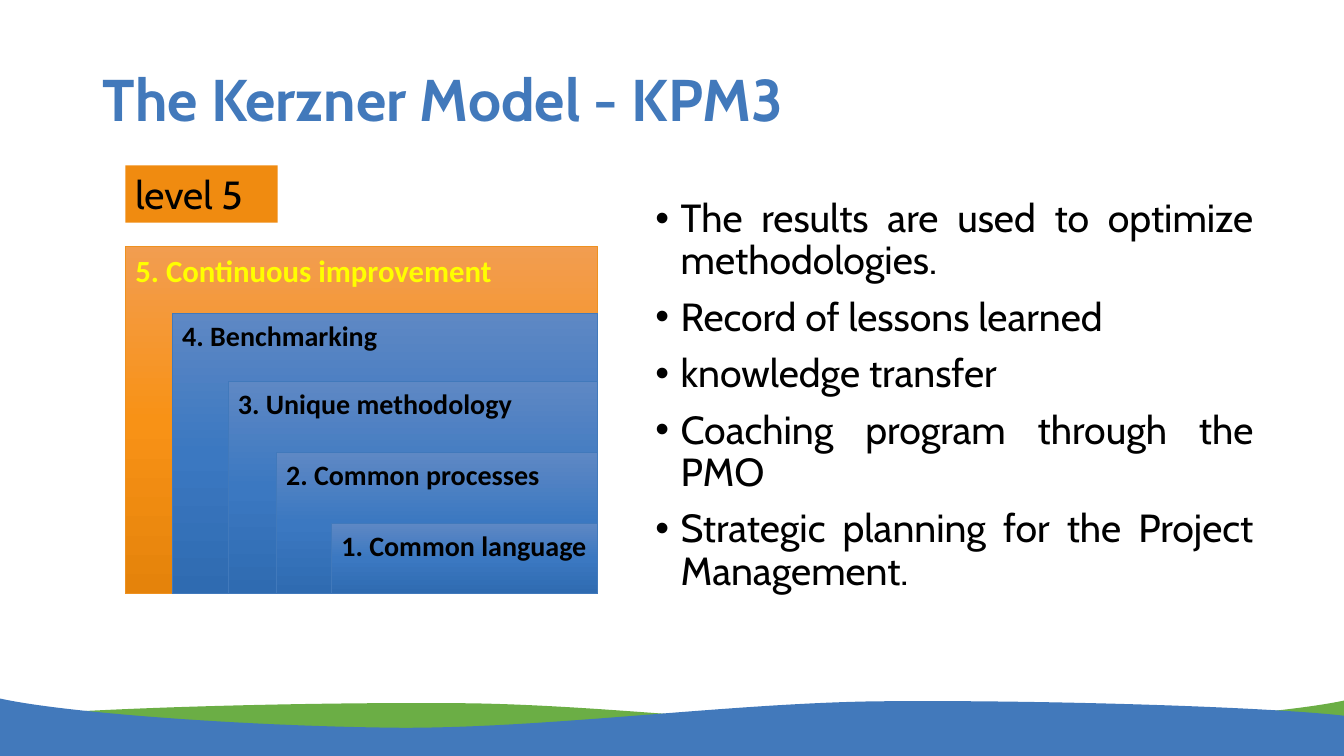
from copy import deepcopy
from dataclasses import dataclass

from lxml import etree
from pptx import Presentation
from pptx.dml.color import RGBColor
from pptx.enum.shapes import MSO_SHAPE
from pptx.enum.text import MSO_ANCHOR, MSO_AUTO_SIZE, PP_ALIGN
from pptx.oxml.ns import qn
from pptx.util import Inches, Pt

RECTANGLE = MSO_SHAPE.RECTANGLE
TOP, MIDDLE = MSO_ANCHOR.TOP, MSO_ANCHOR.MIDDLE
LEFT, JUSTIFY = PP_ALIGN.LEFT, PP_ALIGN.JUSTIFY
NO_AUTOFIT = MSO_AUTO_SIZE.NONE

SLIDE_WIDTH, SLIDE_HEIGHT = Inches(13.33), Inches(7.5)


@dataclass(frozen=True)
class Theme:
    font: str = "Cabin"
    level_font: str = "Calibri"
    blue: str = "4279BB"
    green: str = "6BAE45"
    orange: str = "F08B10"
    text: str = "000000"
    highlight: str = "FFFF00"
    blue_gradient: tuple = ("5E88C4", "3B78C1", "2F6BB1")
    blue_line: str = "4179BB"
    orange_gradient: tuple = ("F29D50", "F89216", "E5830B")
    orange_line: str = "EE9120"
    title_size: int = 42
    body_size: int = 28
    top_level_size: int = 22
    level_size: int = 20


@dataclass(frozen=True)
class Box:
    """An area on a grid of 100 columns by 100 rows."""
    column: float
    row: float
    columns: float
    rows: float

    def emu(self):
        across, down = SLIDE_WIDTH / 100, SLIDE_HEIGHT / 100
        return (round(self.column * across), round(self.row * down),
                round(self.columns * across), round(self.rows * down))

    def corner(self, x, y):
        """The part right of and below the point given in percent of the box."""
        x, y = x / 100, y / 100
        return Box(self.column + x * self.columns, self.row + y * self.rows,
                   (1 - x) * self.columns, (1 - y) * self.rows)


THEME = Theme()

TITLE = "The Kerzner Model - KPM3"
RESULTS = [
    "The results are used to optimize methodologies.",
    "Record of lessons learned",
    "knowledge transfer",
    "Coaching program through the PMO",
    "Strategic planning for the Project Management.",
]
# Level name with the left and top of its rectangle, in percent of the stack
LEVELS = [
    ("5. Continuous improvement", 0, 0),
    ("4. Benchmarking", 9.9, 19.2),
    ("3. Unique methodology", 21.7, 38.8),
    ("2. Common processes", 31.9, 59.4),
    ("1. Common language", 43.6, 79.7),
]
# Bézier points of the wave's crest, as shares of its box
CREST = [(0, 0), (0.05, 0.26), (0.19, 0.49), (0.3, 0.51), (0.41, 0.51),
         (0.54, 0.09), (0.65, 0.05), (0.77, 0.02), (0.94, 0.14), (1, 0.3)]


def color(value):
    return RGBColor.from_string(value)


def write(paragraph, text, size, value=THEME.text, font=THEME.font, bold=False):
    run = paragraph.add_run()
    run.text = text
    run.font.name, run.font.size = font, Pt(size)
    run.font.bold = bold
    run.font.color.rgb = color(value)


def place(shape, box):
    shape.left, shape.top, shape.width, shape.height = box.emu()


def add_panel(slide, box):
    """Add a rectangle with text at its top left."""
    panel = slide.shapes.add_shape(RECTANGLE, *box.emu())
    panel.shadow.inherit = False
    panel.text_frame.word_wrap = True
    panel.text_frame.vertical_anchor = TOP
    panel.text_frame.paragraphs[0].alignment = LEFT
    return panel


def fill_gradient(shape, values):
    """Fill from top to bottom with three evenly spaced colours."""
    shape.fill.gradient()
    shape.fill.gradient_angle = 270
    stop_list = shape.element.spPr.find(qn("a:gradFill")).find(qn("a:gsLst"))
    stop_list.insert(1, deepcopy(stop_list[0]))
    for index, (stop, value) in enumerate(zip(shape.fill.gradient_stops, values)):
        stop.color.rgb = color(value)
        stop.position = index / 2


def curve_crest(wave):
    """Turn each three line segments of the crest into one Bézier curve."""
    segments = list(wave.element.iter(qn("a:lnTo")))[:len(CREST) - 1]
    for first in range(0, len(segments), 3):
        curve = etree.Element(qn("a:cubicBezTo"))
        segments[first].addprevious(curve)
        for segment in segments[first:first + 3]:
            curve.append(segment[0])
            segment.getparent().remove(segment)


def add_wave(slide, box, value, mirrored=False):
    left, top, width, height = box.emu()
    points = [(round(left + width * (1 - x if mirrored else x)),
               round(top + height * y)) for x, y in [*CREST, (1, 1), (0, 1)]]
    builder = slide.shapes.build_freeform(*points[0])
    builder.add_line_segments(points[1:], close=True)
    wave = builder.convert_to_shape()
    curve_crest(wave)
    wave.shadow.inherit = False
    wave.fill.solid()
    wave.fill.fore_color.rgb = color(value)
    wave.line.fill.background()


def add_title(slide, box):
    title = slide.shapes.title
    place(title, box)
    title.text_frame.auto_size = NO_AUTOFIT
    title.text_frame.vertical_anchor = MIDDLE
    heading = title.text_frame.paragraphs[0]
    heading.alignment, heading.line_spacing = LEFT, 0.9
    write(heading, TITLE, THEME.title_size, THEME.blue, bold=True)


def add_results(slide, box):
    results = slide.placeholders[1]
    place(results, box)
    frame = results.text_frame
    frame.auto_size = NO_AUTOFIT
    for index, result in enumerate(RESULTS):
        item = frame.add_paragraph() if index else frame.paragraphs[0]
        item.alignment, item.line_spacing = JUSTIFY, 0.9
        item.space_before = Pt(10)
        # Hanging bullet
        properties = item._p.get_or_add_pPr()
        properties.set("marL", str(Inches(0.25)))
        properties.set("indent", str(-Inches(0.25)))
        write(item, result, THEME.body_size)


def add_level_label(slide, box):
    label = add_panel(slide, box)
    label.fill.solid()
    label.fill.fore_color.rgb = color(THEME.orange)
    label.line.fill.background()
    write(label.text_frame.paragraphs[0], "level 5", THEME.body_size)


def add_level_stack(slide, box):
    """Nest the levels so that all share the bottom right corner."""
    for index, (name, x, y) in enumerate(LEVELS):
        current = index == 0
        level = add_panel(slide, box.corner(x, y))
        fill_gradient(level, THEME.orange_gradient if current else THEME.blue_gradient)
        level.line.color.rgb = color(THEME.orange_line if current else THEME.blue_line)
        level.line.width = Pt(0.5)
        write(level.text_frame.paragraphs[0], name,
              THEME.top_level_size if current else THEME.level_size,
              THEME.highlight if current else THEME.text,
              THEME.level_font, bold=True)


def main():
    deck = Presentation()
    deck.slide_width, deck.slide_height = SLIDE_WIDTH, SLIDE_HEIGHT
    slide = deck.slides.add_slide(deck.slide_layouts[1])
    # Footer waves
    add_wave(slide, Box(0, 92.67, 100, 7.33), THEME.green, mirrored=True)
    add_wave(slide, Box(0, 92.4, 100, 7.6), THEME.blue)
    # Title and list
    add_title(slide, Box(6.9, 3.87, 86.25, 19.33))
    add_results(slide, Box(48.02, 25.62, 45.98, 65.2))
    # Maturity levels
    add_level_label(slide, Box(9.34, 21.87, 11.33, 7.6))
    add_level_stack(slide, Box(9.34, 32.6, 35.14, 45.92))
    deck.save("out.pptx")


if __name__ == "__main__":
    main()
